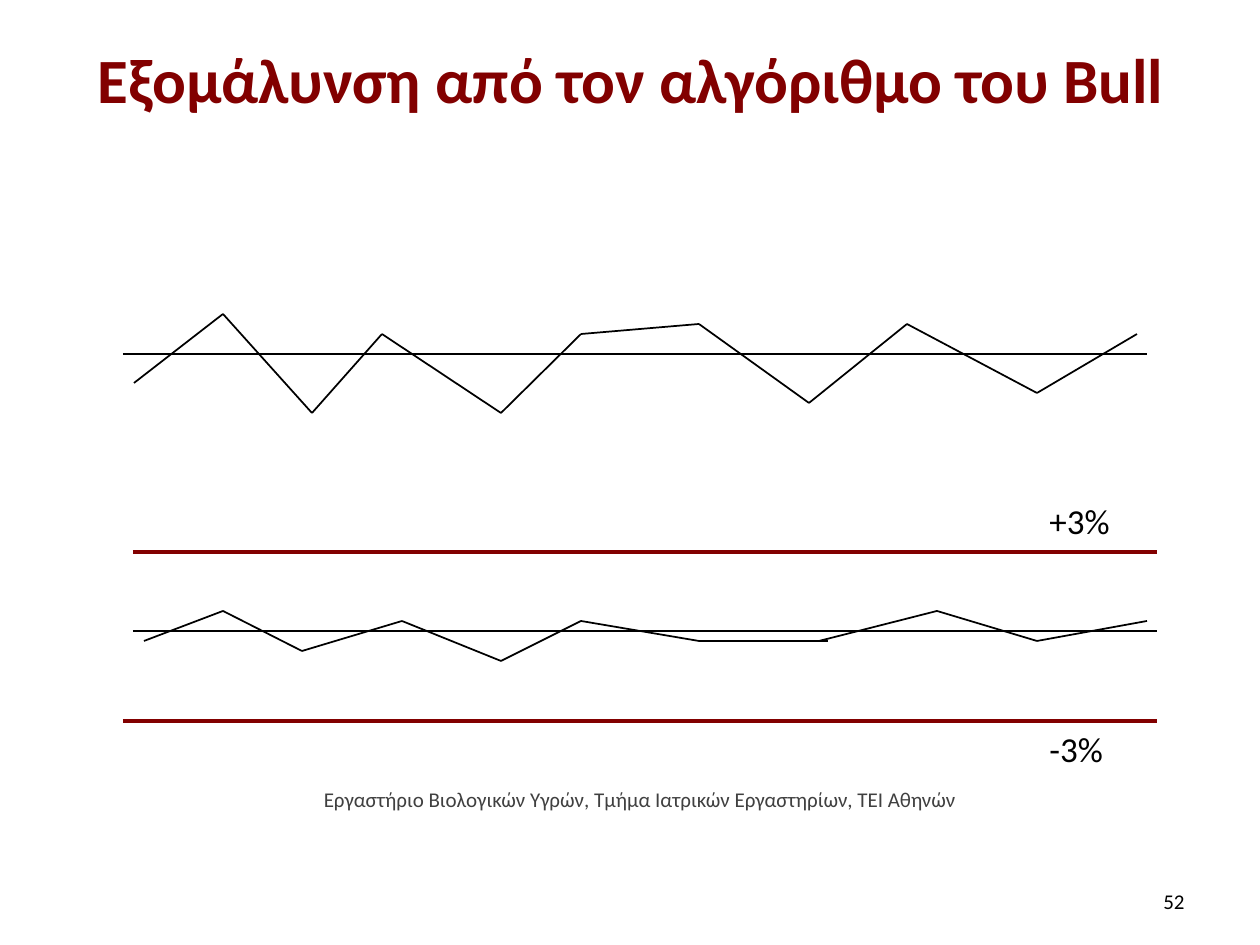
from itertools import pairwise
from typing import NamedTuple

from lxml import etree
from pptx import Presentation
from pptx.dml.color import RGBColor
from pptx.enum.shapes import MSO_CONNECTOR
from pptx.enum.text import MSO_ANCHOR, PP_ALIGN
from pptx.oxml.ns import qn
from pptx.util import Emu, Pt

STRAIGHT = MSO_CONNECTOR.STRAIGHT
TOP, MIDDLE = MSO_ANCHOR.TOP, MSO_ANCHOR.MIDDLE
LEFT, CENTER, RIGHT = PP_ALIGN.LEFT, PP_ALIGN.CENTER, PP_ALIGN.RIGHT

PX_PER_INCH = 126
FONT = "Calibri"
BLACK, DARK_RED, GREY = "000000", "820000", "404040"


class Label(NamedTuple):
    text: str
    left: int
    top: int
    width: int
    height: int
    size: int
    color: str = BLACK
    bold: bool = False
    align: PP_ALIGN = LEFT
    anchor: MSO_ANCHOR = TOP


class Trace(NamedTuple):
    points: list[tuple[int, int]]
    color: str = BLACK
    weight: float = 1


LABELS = [
    Label("Εξομάλυνση από τον αλγόριθμο του Bull", 64, 16, 1134, 125, 36,
          DARK_RED, True, CENTER, MIDDLE),
    Label("52", 903, 876, 294, 50, 12, align=RIGHT, anchor=MIDDLE),
    Label("+3%", 1037, 493, 159, 55, 20),
    Label("-3%", 1037, 721, 118, 55, 20),
    Label("Εργαστήριο Βιολογικών Υγρών, Τμήμα Ιατρικών Εργαστηρίων, ΤΕΙ Αθηνών",
          243, 780, 794, 38, 12, GREY, align=CENTER),
]

TRACES = [
    # Raw values around their mean
    Trace([(123, 354), (1147, 354)]),
    Trace([(134, 383), (223, 314), (312, 413), (382, 334), (501, 413), (581, 334),
           (699, 324), (809, 403), (907, 324), (1037, 393), (1137, 334)]),
    # Smoothed values between the control limits
    Trace([(133, 552), (1157, 552)], DARK_RED, 2.25),
    Trace([(133, 631), (1157, 631)]),
    Trace([(123, 721), (1157, 721)], DARK_RED, 2.25),
    Trace([(144, 641), (223, 611), (302, 651), (402, 621), (501, 661), (581, 621),
           (699, 641), (828, 641)]),
    Trace([(819, 641), (937, 611), (1037, 641), (1147, 621)]),
]


def px(n: int) -> Emu:
    return Emu(round(n * 914400 / PX_PER_INCH))


def rgb(color: str) -> RGBColor:
    return RGBColor.from_string(color)


def draw_trace(slide, trace: Trace) -> None:
    """Join consecutive points with straight connectors."""
    for start, end in pairwise(trace.points):
        line = slide.shapes.add_connector(STRAIGHT, *map(px, start + end))
        line.line.color.rgb = rgb(trace.color)
        line.line.width = Pt(trace.weight)
        etree.SubElement(line._element.spPr, qn("a:effectLst"))


def draw_label(slide, label: Label) -> None:
    box = slide.shapes.add_textbox(px(label.left), px(label.top),
                                   px(label.width), px(label.height))
    tf = box.text_frame
    tf.word_wrap = True
    tf.vertical_anchor = label.anchor
    tf.text = label.text
    p = tf.paragraphs[0]
    p.alignment = label.align
    font = p.runs[0].font
    font.name = FONT
    font.size = Pt(label.size)
    font.bold = label.bold
    font.color.rgb = rgb(label.color)


def main() -> None:
    prs = Presentation()
    prs.slide_width, prs.slide_height = px(1260), px(945)
    slide = prs.slides.add_slide(prs.slide_layouts[6])
    for trace in TRACES:
        draw_trace(slide, trace)
    for label in LABELS:
        draw_label(slide, label)
    prs.save("out.pptx")


if __name__ == "__main__":
    main()
